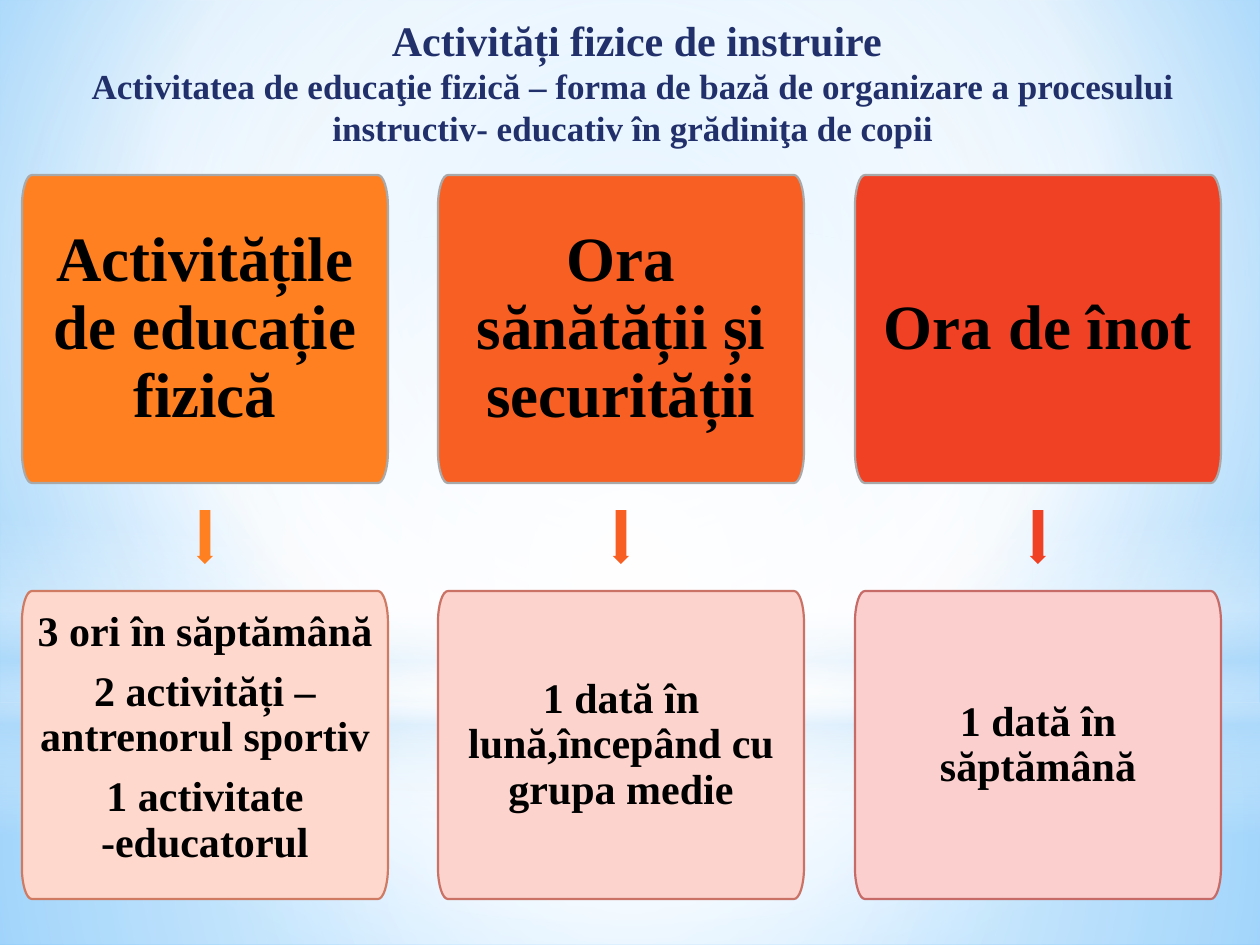
from dataclasses import dataclass
from typing import NamedTuple

from lxml import etree
from pptx import Presentation
from pptx import util as u
from pptx.dml.color import RGBColor
from pptx.enum import shapes, text
from pptx.oxml import parse_xml
from pptx.oxml.ns import nsdecls, qn

PX = u.Inches(1) / 126
FONT = "Times New Roman"
CARD_WIDTH, CARD_HEIGHT = 366, 308
CORNER_X, CORNER_Y = 10, 31
CURVE = 0.55
LEFT, SPAN = 22, 833
HEAD_TOP, ARROW_TOP, DETAIL_TOP = 175, 510, 591
ARROW_WIDTH, ARROW_HEIGHT = 16, 54
INSET = 6


class Stop(NamedTuple):
    position: int
    colour: str
    opacity: int = 100


@dataclass
class Glow:
    preset: shapes.MSO_SHAPE
    top: int
    height: int
    stops: list[Stop]
    angle: int | None = None


@dataclass
class Column:
    heading: str
    colour: str
    details: list[str]
    pale: str
    edge: str
    lift: int = 0


GLOWS = [
    Glow(shapes.MSO_SHAPE.RECTANGLE, 703, 242,
         [Stop(0, "FFFFFF", 91), Stop(37, "FFFFFF", 76), Stop(100, "B4DCFA", 79)]),
    Glow(shapes.MSO_SHAPE.RECTANGLE, 0, 703,
         [Stop(0, "FFFFFF", 89), Stop(48, "FFFFFF", 62), Stop(100, "B4DCFA", 79)]),
    Glow(shapes.MSO_SHAPE.RECTANGLE, 519, 315,
         [Stop(0, "FFFFFF", 0), Stop(29, "FFFFFF", 30), Stop(45, "B4DCFA", 40),
          Stop(55, "FFFFFF", 26), Stop(65, "B4DCFA", 60), Stop(100, "FFFFFF", 0)], 90),
    Glow(shapes.MSO_SHAPE.OVAL, 220, 703,
         [Stop(0, "FFFFFF"), Stop(56, "FFFFFF", 0)]),
]

COLUMNS = [
    Column("Activitățile de educație fizică", "FF8021",
           ["3 ori în săptămână", "2 activități –antrenorul sportiv",
            "1 activitate -educatorul"], "FFD8CD", "CF7A62", 14),
    Column("Ora sănătății și securității", "F85F22",
           ["1 dată în lună,începând cu grupa medie"], "FCD3CD", "CA7265"),
    Column("Ora de înot", "F14124", ["1 dată în săptămână"], "FACFCD", "C66B67"),
]


def px(length: float) -> u.Emu:
    return u.Emu(round(length * PX))


def rgb(colour: str) -> RGBColor:
    return RGBColor.from_string(colour)


def set_gradient(fill, owner, stops: list[Stop], angle: int | None = None,
                 focus: tuple = (50, 50, 50, 50)) -> None:
    fill.gradient()
    marks = "".join(
        f'<a:gs pos="{stop.position * 1000}"><a:srgbClr val="{stop.colour}">'
        f'<a:alpha val="{stop.opacity * 1000}"/></a:srgbClr></a:gs>' for stop in stops)
    if angle is None:
        edges = " ".join(f'{side}="{value * 1000}"' for side, value in zip("ltrb", focus))
        shade = f'<a:path path="circle"><a:fillToRect {edges}/></a:path>'
    else:
        shade = f'<a:lin ang="{angle * 60000}" scaled="0"/>'
    old = next(owner.iter(qn("a:gradFill")))
    old.getparent().replace(old, parse_xml(
        f'<a:gradFill {nsdecls("a")} rotWithShape="1"><a:gsLst>{marks}</a:gsLst>{shade}</a:gradFill>'))


def add_glow(page, glow: Glow) -> None:
    shape = page.shapes.add_shape(glow.preset, 0, px(glow.top), u.Inches(10), px(glow.height))
    shape.shadow.inherit = False
    shape.line.fill.background()
    set_gradient(shape.fill, shape.element, glow.stops, glow.angle)


def style(para, size: int, colour: str) -> None:
    para.alignment = text.PP_ALIGN.CENTER
    para.font.name, para.font.size, para.font.bold = FONT, u.Pt(size), True
    para.font.color.rgb = rgb(colour)


def round_corners(card) -> None:
    points = [(int(pt.get("x")), int(pt.get("y"))) for pt in card.element.iter(qn("a:pt"))]
    sides = list(card.element.iter(qn("a:lnTo")))
    for index in range(0, len(sides), 2):
        start, end = points[index], points[index + 1]
        corner = (start[0], end[1]) if index % 4 == 0 else (end[0], start[1])
        bend = etree.Element(qn("a:cubicBezTo"))
        for origin, pull in ((start, CURVE), (end, CURVE), (end, 0)):
            x, y = (round(a + pull * (b - a)) for a, b in zip(origin, corner))
            etree.SubElement(bend, qn("a:pt"), x=str(x), y=str(y))
        sides[index].getparent().replace(sides[index], bend)


def add_card(page, left: int, top: int, fill: str, edge: str, lines: list[str],
             size: int, lift: int = 0) -> None:
    right, bottom = left + CARD_WIDTH, top + CARD_HEIGHT
    inner_left, inner_right = left + CORNER_X, right - CORNER_X
    inner_top, inner_bottom = top + CORNER_Y, bottom - CORNER_Y
    corners = [(left, inner_top), (inner_left, top), (inner_right, top), (right, inner_top),
               (right, inner_bottom), (inner_right, bottom), (inner_left, bottom),
               (left, inner_bottom)]
    points = [(px(x), px(y)) for x, y in corners]
    builder = page.shapes.build_freeform(*points[0], scale=1.0)
    builder.add_line_segments(points[1:], close=False)
    builder.add_line_segments([], close=True)
    card = builder.convert_to_shape()
    round_corners(card)
    card.shadow.inherit = False
    card.fill.solid()
    card.fill.fore_color.rgb = rgb(fill)
    card.line.color.rgb = rgb(edge)
    card.line.width = u.Pt(1.25)
    frame = card.text_frame
    frame.word_wrap = True
    frame.vertical_anchor = text.MSO_ANCHOR.MIDDLE
    frame.margin_left = frame.margin_right = frame.margin_top = px(INSET)
    frame.margin_bottom = px(INSET + lift)
    frame.text = "\n".join(lines)
    for para in frame.paragraphs:
        style(para, size, "000000")
        para.line_spacing = 0.9
        para.space_after = u.Pt(size * 0.35)


def add_arrow(page, left: int, colour: str) -> None:
    arrow = page.shapes.add_shape(
        shapes.MSO_SHAPE.DOWN_ARROW, px(left + (CARD_WIDTH - ARROW_WIDTH) / 2),
        px(ARROW_TOP), px(ARROW_WIDTH), px(ARROW_HEIGHT))
    arrow.adjustments[0], arrow.adjustments[1] = 0.67, 0.5
    arrow.shadow.inherit = False
    arrow.fill.solid()
    arrow.fill.fore_color.rgb = rgb(colour)
    arrow.line.fill.background()


def add_title(page) -> None:
    box = page.shapes.add_textbox(px(3), px(8), px(1260), px(157))
    frame = box.text_frame
    frame.word_wrap = True
    para = frame.paragraphs[0]
    para.text = (" Activități fizice de instruire\v"
                 "Activitatea de educaţie fizică – forma de bază de organizare a procesului "
                 "instructiv- educativ în grădiniţa de copii")
    style(para, 20, "21306A")
    para.runs[0].font.size = u.Pt(24)


def main() -> None:
    deck = Presentation()
    deck.slide_width, deck.slide_height = u.Inches(10), u.Inches(7.5)
    page = deck.slides.add_slide(deck.slide_layouts[6])
    set_gradient(page.background.fill, page.element,
                 [Stop(0, "9ED5FF"), Stop(60, "FFFFFF"), Stop(100, "5BB9FF")],
                 focus=(20, 10, 20, 60))
    for glow in GLOWS:
        add_glow(page, glow)
    add_title(page)
    for index, column in enumerate(COLUMNS):
        left = LEFT + index * SPAN // 2
        add_card(page, left, HEAD_TOP, column.colour, "A9A9A9", [column.heading], 36)
        add_arrow(page, left, column.colour)
        add_card(page, left, DETAIL_TOP, column.pale, column.edge, column.details, 24,
                 column.lift)
    deck.save("out.pptx")


if __name__ == "__main__":
    main()
